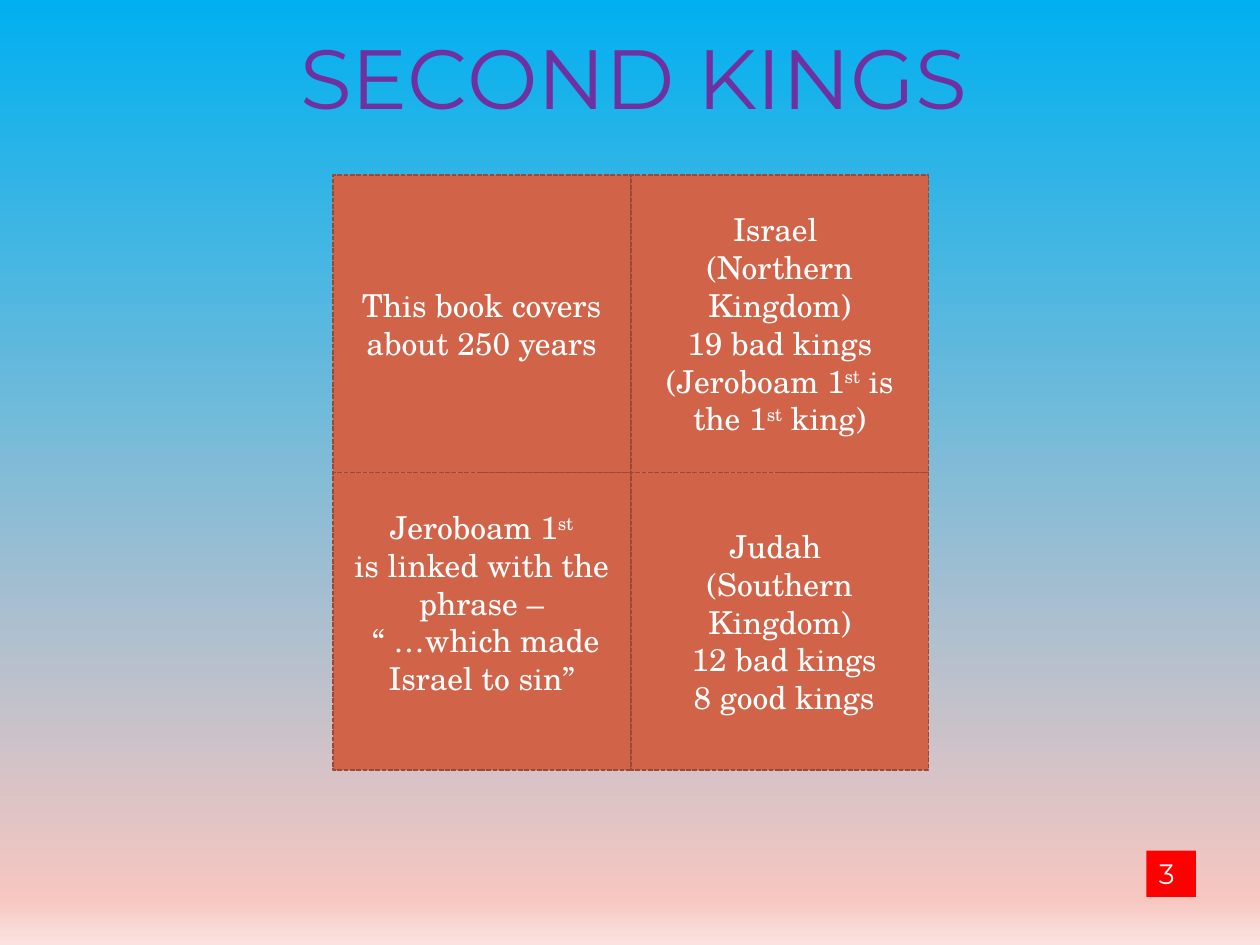
import copy

import pptx
import pptx.dml.color
import pptx.enum.dml
import pptx.enum.shapes
import pptx.enum.text
import pptx.util
from pptx.dml.color import RGBColor
from pptx.util import Cm, Pt

SKY = RGBColor(0x00, 0xB0, 0xF0)
ROSE = RGBColor(0xF7, 0xC6, 0xC0)
PALE_ROSE = RGBColor(0xFA, 0xE2, 0xE0)
PURPLE = RGBColor(0x70, 0x30, 0xA0)
RED = RGBColor(0xFF, 0x00, 0x00)
BRICK = RGBColor(0xD1, 0x63, 0x49)
DARK_BRICK = RGBColor(0x9B, 0x49, 0x36)
WHITE = RGBColor(0xFF, 0xFF, 0xFF)

ALIGN = pptx.enum.text.PP_ALIGN
ANCHOR = pptx.enum.text.MSO_ANCHOR

TITLE_FONT = {"name": "Montserrat", "size": Pt(48)}
NUMBER_FONT = {"name": "Montserrat", "size": Pt(16)}
TILE_FONT = {"name": "TeX Gyre Schola", "size": Pt(18)}

TILE_SIZE = 6
TILE_LEFT, TILE_TOP = 6.71, 3.53
COLUMN_STEP, ROW_STEP = 6.01, 6

# Text between carets is superscript.
KINGDOM_TILES = [
    [
        ["This book covers about 250 years"],
        ["Israel ", "(Northern Kingdom)", "19 bad kings",
         "(Jeroboam 1^st^ is the 1^st^ king)"],
    ],
    [
        ["Jeroboam 1^st^", "is linked with the phrase –",
         " “ …which made Israel to sin”"],
        ["Judah ", "(Southern Kingdom)", " 12 bad kings", " 8 good kings"],
    ],
]


def apply_format(target, values):
    for name, value in values.items():
        setattr(target, name, value)


def set_background(slide):
    fill = slide.background.fill
    fill.gradient()
    fill.gradient_angle = 270
    stop_list = slide.element.xpath(".//a:gsLst")[0]
    stop_list.append(copy.deepcopy(stop_list[-1]))
    colours = [(0, SKY), (0.95, ROSE), (1, PALE_ROSE)]
    for stop, (position, colour) in zip(fill.gradient_stops, colours):
        stop.position = position
        stop.color.rgb = colour


def write_lines(frame, lines, font, colour, alignment):
    """Write one paragraph a line, raising the parts between carets."""
    for index, line in enumerate(lines):
        paragraph = frame.add_paragraph() if index else frame.paragraphs[0]
        paragraph.alignment = alignment
        for part, words in enumerate(line.split("^")):
            if not words:
                continue
            run = paragraph.add_run()
            run.text = words
            apply_format(run.font, font)
            run.font.color.rgb = colour
            if part % 2:
                run.font._element.set("baseline", "30000")


def add_title(slide, words):
    title = slide.shapes.title
    apply_format(title, {"left": Cm(0.71), "top": Cm(0.33),
                         "width": Cm(24.13), "height": Cm(2.34)})
    apply_format(title.text_frame, {
        "vertical_anchor": ANCHOR.BOTTOM,
        "auto_size": pptx.enum.text.MSO_AUTO_SIZE.NONE,
    })
    write_lines(title.text_frame, [words], TITLE_FONT, PURPLE, ALIGN.CENTER)


def add_box(slide, left, top, width, height, colour):
    box = slide.shapes.add_shape(
        pptx.enum.shapes.MSO_SHAPE.RECTANGLE,
        Cm(left), Cm(top), Cm(width), Cm(height))
    box.shadow.inherit = False
    box.fill.solid()
    box.fill.fore_color.rgb = colour
    box.text_frame.word_wrap = True
    return box


def add_slide_number(slide, number):
    box = add_box(slide, 23.11, 17.15, 1, 0.93, RED)
    box.line.fill.background()
    box.text_frame.vertical_anchor = ANCHOR.TOP
    write_lines(box.text_frame, [number], NUMBER_FONT, WHITE, ALIGN.LEFT)


def add_tile(slide, row, column, lines):
    tile = add_box(slide, TILE_LEFT + column * COLUMN_STEP,
                   TILE_TOP + row * ROW_STEP, TILE_SIZE, TILE_SIZE, BRICK)
    tile.line.color.rgb = DARK_BRICK
    apply_format(tile.line, {
        "width": Pt(0.9),
        "dash_style": pptx.enum.dml.MSO_LINE.SQUARE_DOT,
    })
    tile.text_frame.vertical_anchor = ANCHOR.MIDDLE
    write_lines(tile.text_frame, lines, TILE_FONT, WHITE, ALIGN.CENTER)
    return tile


def main():
    presentation = pptx.Presentation()
    apply_format(presentation, {"slide_width": Cm(25.4),
                                "slide_height": Cm(19.05)})
    slide = presentation.slides.add_slide(presentation.slide_layouts[5])
    set_background(slide)
    add_title(slide, "SECOND KINGS")
    add_slide_number(slide, "3")
    tiles = [[add_tile(slide, row, column, lines)
              for column, lines in enumerate(row_tiles)]
             for row, row_tiles in enumerate(KINGDOM_TILES)]
    # The Jeroboam text sits half a line above the middle of its tile.
    tiles[1][0].text_frame.margin_bottom = Cm(0.89)
    presentation.save("out.pptx")


if __name__ == "__main__":
    main()
